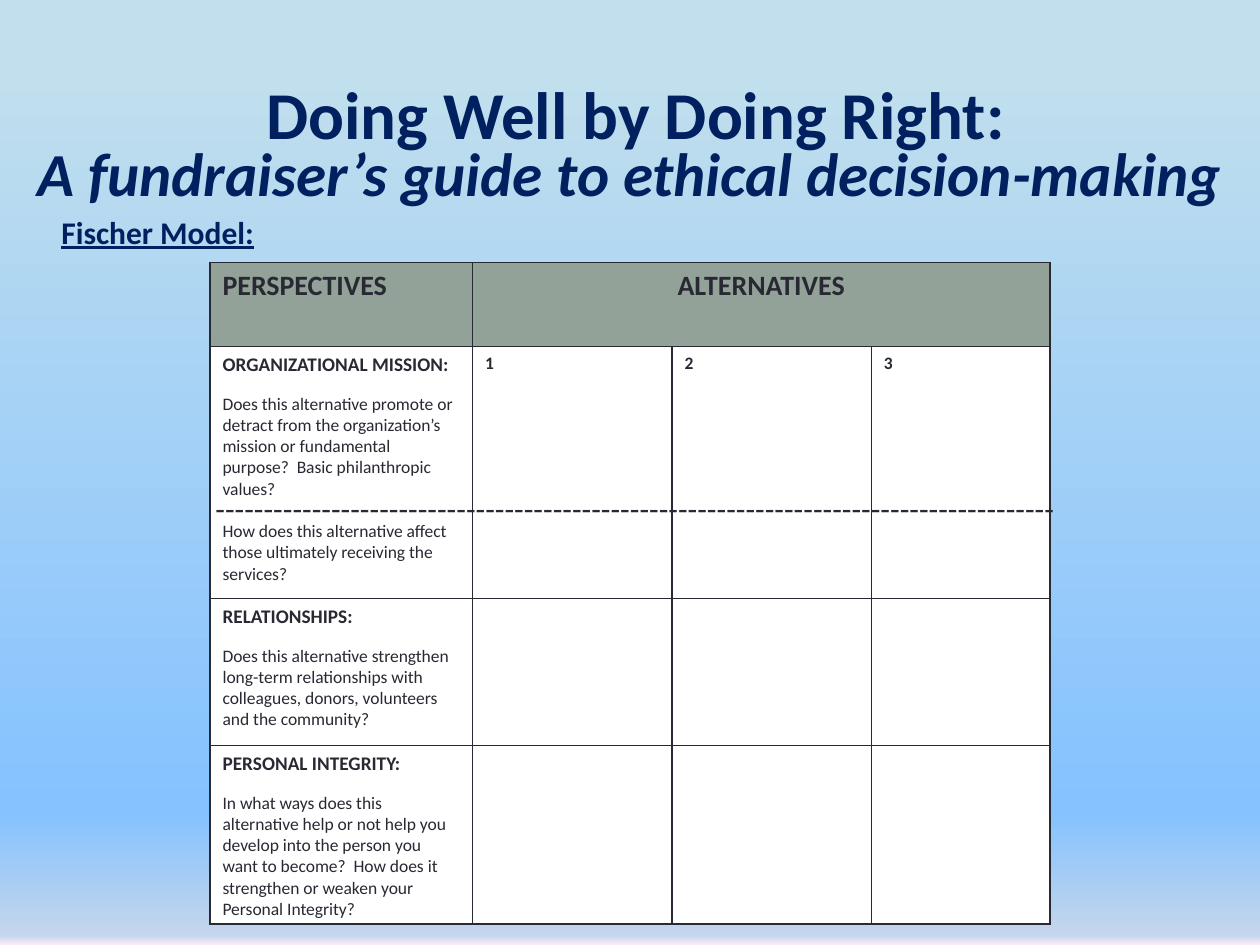
from lxml.etree import SubElement
from pptx import Presentation
from pptx.dml.color import RGBColor
from pptx.enum.text import PP_ALIGN
from pptx.oxml.ns import qn
from pptx.util import Pt

FONT = "Calibri"
COLORS = {"navy": "002060", "ink": "292934", "sage": "93A299", "white": "FFFFFF"}
BACKGROUND = [(7, "C1DFED"), (86, "85C2FF"), (99, "C4D6EB"), (100, "FFEBFA")]

TITLE = "Doing Well by Doing Right:"
SUBTITLE = "A fundraiser’s guide to ethical decision-making"
MODEL = "Fischer Model:"
HEADERS = ["PERSPECTIVES", "ALTERNATIVES"]
ALTERNATIVES = ["1", "2", "3"]
PERSPECTIVES = [
    ("ORGANIZATIONAL MISSION:", [
        "Does this alternative promote or detract from the organization’s mission "
        "or fundamental purpose?  Basic philanthropic values?",
        "How does this alternative affect those ultimately receiving the services?"]),
    ("RELATIONSHIPS:", [
        "Does this alternative strengthen long-term relationships with colleagues, "
        "donors, volunteers and the community?"]),
    ("PERSONAL INTEGRITY:", [
        "In what ways does this alternative help or not help you develop into the "
        "person you want to become?  How does it strengthen or weaken your "
        "Personal Integrity?"]),
]
DIVIDER = "-" * 87

LEFT, TOP, HEADER_HEIGHT = 120, 150, 48
COL_WIDTHS = [150, 114, 114, 102]
ROW_HEIGHTS = [144, 84, 102]


def write(p, text, size, color, bold=False, italic=False, underline=False,
          align=PP_ALIGN.LEFT, before=0):
    p.text = text
    p.alignment = align
    p.space_before = Pt(before)
    for r in p.runs:
        f = r.font
        f.name, f.size = FONT, Pt(size)
        f.bold, f.italic, f.underline = bold, italic, underline
        f.color.rgb = RGBColor.from_string(COLORS[color])


def add_text(s, box, text, size, color, wrap=True, margin_top=3.6, **style):
    tf = s.shapes.add_textbox(*map(Pt, box)).text_frame
    tf.word_wrap = wrap
    tf.margin_top = Pt(margin_top)
    write(tf.paragraphs[0], text, size, color, **style)


def add_grid(s, top, widths, heights, fill):
    frame = s.shapes.add_table(len(heights), len(widths), Pt(LEFT), Pt(top),
                               Pt(sum(widths)), Pt(sum(heights)))
    table = frame.table
    table.first_row = table.horz_banding = False
    for column, width in zip(table.columns, widths):
        column.width = Pt(width)
    for row, height in zip(table.rows, heights):
        row.height = Pt(height)
    for cell in table.iter_cells():
        cell.margin_bottom = Pt(1)
        tcPr = cell._tc.get_or_add_tcPr()
        for side in ("lnL", "lnR", "lnT", "lnB"):
            ln = SubElement(tcPr, qn(f"a:{side}"), w=str(Pt(1)))
            solid = SubElement(ln, qn("a:solidFill"))
            SubElement(solid, qn("a:srgbClr"), val=COLORS["ink"])
        cell.fill.solid()
        cell.fill.fore_color.rgb = RGBColor.from_string(COLORS[fill])
    return table


def set_background(s):
    fill = s.background.fill
    fill.gradient()
    fill.gradient_angle = 270
    stops = s._element.find(f".//{qn('a:gsLst')}")
    for stop in list(stops):
        stops.remove(stop)
    for position, color in BACKGROUND:
        stop = SubElement(stops, qn("a:gs"), pos=str(position * 1000))
        SubElement(stop, qn("a:srgbClr"), val=color)


def main():
    prs = Presentation()
    prs.slide_width, prs.slide_height = Pt(720), Pt(540)
    s = prs.slides.add_slide(prs.slide_layouts[6])
    set_background(s)

    add_text(s, (15, 36, 696, 48), TITLE, 38.2, "navy", margin_top=5.5,
             bold=True, align=PP_ALIGN.CENTER)
    add_text(s, (12, 72, 696, 48), SUBTITLE, 34.9, "navy", margin_top=5.5,
             bold=True, italic=True, align=PP_ALIGN.CENTER)
    add_text(s, (28, 118, 125, 29), MODEL, 18, "navy", wrap=False,
             bold=True, underline=True)

    body = add_grid(s, TOP + HEADER_HEIGHT, COL_WIDTHS, ROW_HEIGHTS, "white")
    for i, (heading, questions) in enumerate(PERSPECTIVES):
        tf = body.cell(i, 0).text_frame
        write(tf.paragraphs[0], heading, 11, "ink", bold=True)
        for j, question in enumerate(questions):
            write(tf.add_paragraph(), question, 10, "ink", before=12.2 if j else 9.7)
    for i, number in enumerate(ALTERNATIVES, 1):
        write(body.cell(0, i).text_frame.paragraphs[0], number, 10, "ink", bold=True)

    header = add_grid(s, TOP, [COL_WIDTHS[0], sum(COL_WIDTHS[1:])],
                      [HEADER_HEIGHT], "sage")
    for i, (text, align) in enumerate(zip(HEADERS, (PP_ALIGN.LEFT, PP_ALIGN.CENTER))):
        write(header.cell(0, i).text_frame.paragraphs[0], text, 16, "ink",
              bold=True, align=align)

    add_text(s, (116, 276, 522, 29), DIVIDER, 18, "ink")
    prs.save("out.pptx")


if __name__ == "__main__":
    main()
